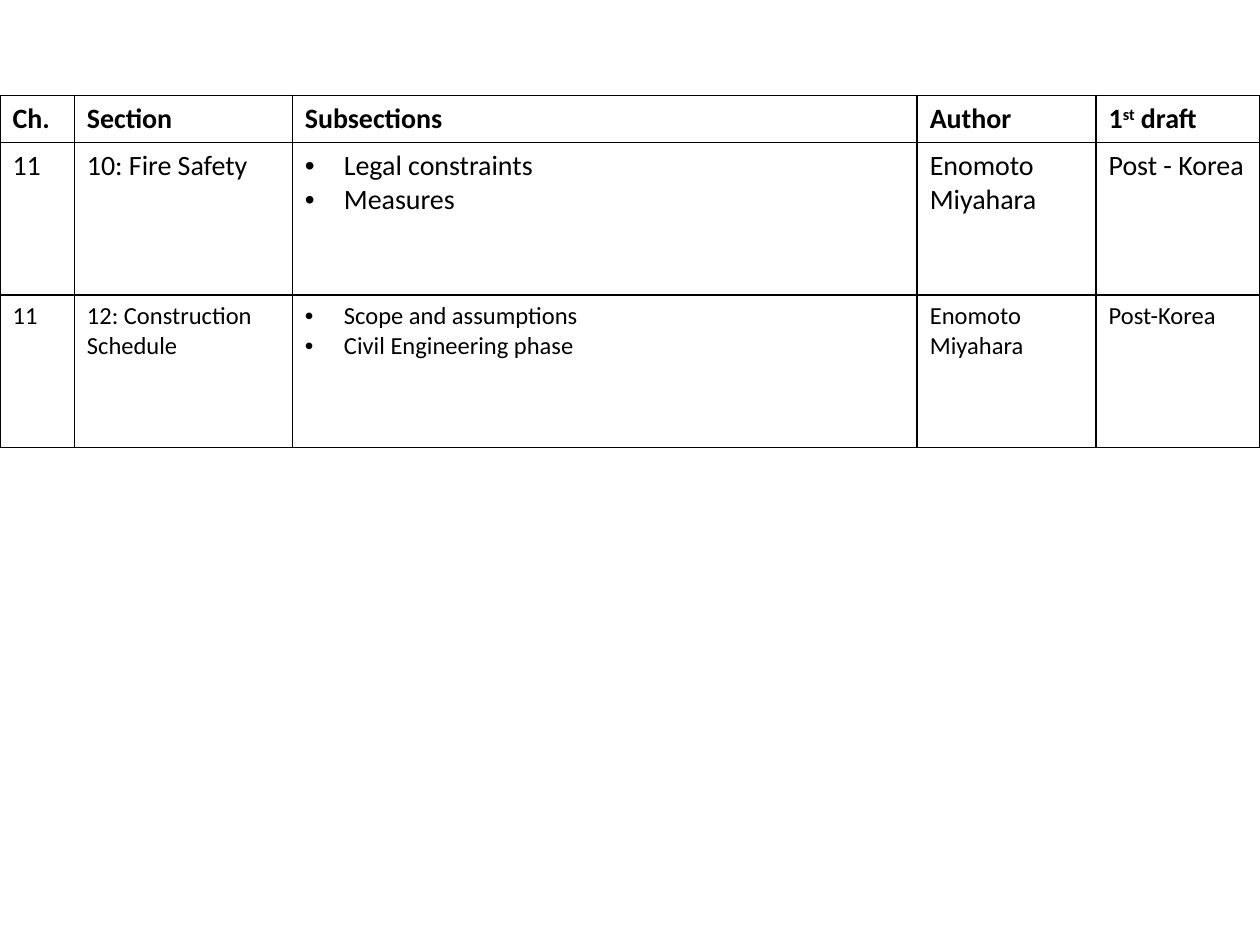
"""Build a slide with a table of chapter sections, authors and draft dates."""
from lxml import etree
from pptx import Presentation
from pptx.dml.color import RGBColor
from pptx.oxml.ns import qn
from pptx.util import Inches, Pt

BLACK = RGBColor(0, 0, 0)
FONT = "Calibri"
WIDE, HIGH = 10, 7.5
TOP = 0.76
COLS = [0.59, 1.73, 4.96, 1.42, 1.3]
INDENT = Inches(0.31)
LIST_COL = 2

ROWS = [
    {"high": 0.37, "size": 16, "bold": True,
     "cells": ["Ch.", "Section", "Subsections", "Author", "1"]},
    {"high": 1.21, "size": 16, "bold": False,
     "cells": ["11", "10: Fire Safety", "Legal constraints\nMeasures",
               "Enomoto\nMiyahara", "Post - Korea"]},
    {"high": 1.21, "size": 14, "bold": False,
     "cells": ["11", "12: Construction Schedule",
               "Scope and assumptions\nCivil Engineering phase",
               "Enomoto\nMiyahara", "Post-Korea"]},
]
ORDINAL = [("st", 30000), (" draft", 0)]


def add_edges(cell):
    """Draw a thin black line on each side of the cell."""
    props = cell._tc.get_or_add_tcPr()
    for spot, side in enumerate(("lnL", "lnR", "lnT", "lnB")):
        line = etree.Element(qn(f"a:{side}"), w=str(Pt(1)))
        fill = etree.SubElement(line, qn("a:solidFill"))
        etree.SubElement(fill, qn("a:srgbClr"), val=str(BLACK))
        props.insert(spot, line)


def add_bullet(para):
    """Give the paragraph a round bullet and a hanging indent."""
    props = para._p.get_or_add_pPr()
    props.set("marL", str(INDENT))
    props.set("indent", str(-INDENT))
    etree.SubElement(props, qn("a:buFont"), typeface="Arial")
    etree.SubElement(props, qn("a:buChar"), char="•")


def add_ordinal(para):
    """Add the raised suffix and the rest of the heading."""
    for text, base in ORDINAL:
        run = para.add_run()
        run.text = text
        run._r.get_or_add_rPr().set("baseline", str(base))


def style_text(cell, size, bold):
    """Set the font of every run in the cell."""
    for para in cell.text_frame.paragraphs:
        for run in para.runs:
            font = run.font
            font.name, font.size, font.bold = FONT, Pt(size), bold
            font.color.rgb = BLACK


def main():
    """Create the slide and save it."""
    deck = Presentation()
    deck.slide_width, deck.slide_height = Inches(WIDE), Inches(HIGH)
    slide = deck.slides.add_slide(deck.slide_layouts[6])
    total = sum(row["high"] for row in ROWS)
    table = slide.shapes.add_table(
        len(ROWS), len(COLS), 0, Inches(TOP), Inches(WIDE), Inches(total)).table
    table.horz_banding = False
    for col, width in zip(table.columns, COLS):
        col.width = Inches(width)
    for r, row in enumerate(ROWS):
        table.rows[r].height = Inches(row["high"])
        for c, text in enumerate(row["cells"]):
            cell = table.cell(r, c)
            cell.text_frame.text = text
            cell.fill.background()
            add_edges(cell)
            if r and c == LIST_COL:
                for para in cell.text_frame.paragraphs:
                    add_bullet(para)
            if r == 0 and c == len(COLS) - 1:
                add_ordinal(cell.text_frame.paragraphs[0])
            style_text(cell, row["size"], row["bold"])
    deck.save("out.pptx")


if __name__ == "__main__":
    main()
